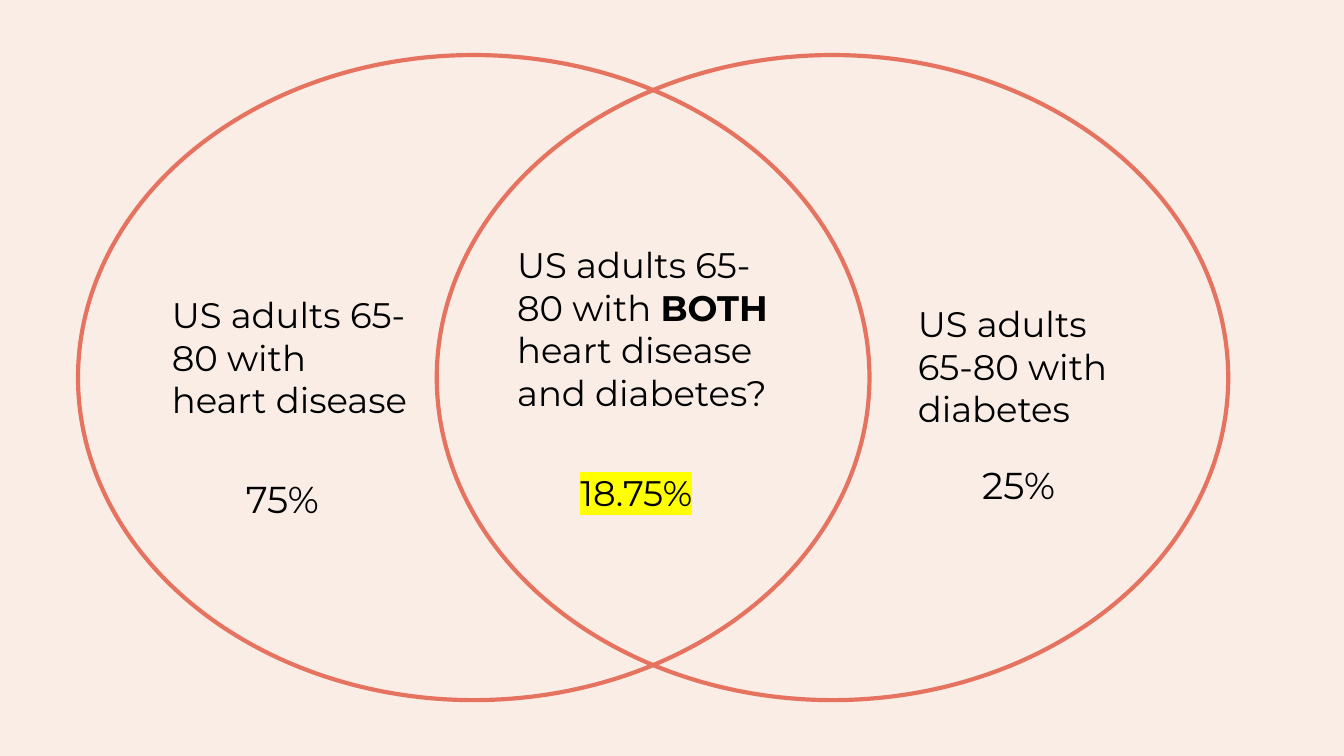
from dataclasses import dataclass

from lxml.etree import Element, SubElement
from pptx import Presentation
from pptx.dml.color import RGBColor
from pptx.enum.shapes import MSO_SHAPE
from pptx.enum.text import MSO_ANCHOR, PP_ALIGN
from pptx.oxml.ns import qn
from pptx.shapes.group import GroupShape
from pptx.slide import Slide
from pptx.util import Pt

CREAM = RGBColor(0xF9, 0xED, 0xE5)
CORAL = RGBColor(0xE5, 0x73, 0x60)
BLACK = RGBColor(0x00, 0x00, 0x00)
YELLOW = RGBColor(0xFF, 0xFF, 0x00)
FONT = "Montserrat"
INSET = Pt(7.2)


@dataclass
class Run:
    text: str
    bold: bool = False
    mark: RGBColor | None = None


@dataclass
class Label:
    left: float
    top: float
    width: float
    height: float
    runs: list[Run]
    size: float = 19


LABELS = [
    Label(85, 149.8, 141.8, 61.2, [Run("US adults 65-80 with heart disease")]),
    Label(270, 123.1, 161.3, 124.6, [
        Run("US adults 65-80 with "),
        Run("BOTH ", bold=True),
        Run("heart disease and diabetes?"),
    ]),
    Label(484.6, 154.8, 133.2, 61.2, [Run("US adults 65-80 with diabetes")]),
    Label(124.6, 247.7, 72, 41.8, [Run("75%")], 20),
    Label(519.1, 240.5, 72, 41.8, [Run("25%")], 20),
    Label(303.84, 245, 91.4, 43.7, [Run("18.75%", mark=YELLOW)]),
]


def draw_ring(group: GroupShape, left: float) -> None:
    ring = group.shapes.add_shape(
        MSO_SHAPE.OVAL, Pt(left), Pt(29.5), Pt(424), Pt(345.6))
    ring.shadow.inherit = False
    ring.fill.background()
    ring.line.color.rgb = CORAL
    ring.line.width = Pt(2.25)


def draw_label(slide: Slide, label: Label) -> None:
    box = slide.shapes.add_textbox(
        Pt(label.left), Pt(label.top), Pt(label.width), Pt(label.height))
    frame = box.text_frame
    frame.word_wrap = True
    frame.vertical_anchor = MSO_ANCHOR.TOP
    frame.margin_left = frame.margin_right = INSET
    frame.margin_top = frame.margin_bottom = INSET
    para = frame.paragraphs[0]
    para.alignment = PP_ALIGN.LEFT
    for part in label.runs:
        run = para.add_run()
        run.text = part.text
        font = run.font
        font.name = FONT
        font.size = Pt(label.size)
        font.bold = part.bold
        font.color.rgb = BLACK
        if part.mark is not None:
            mark = Element(qn("a:highlight"))
            SubElement(mark, qn("a:srgbClr"), val=str(part.mark))
            run._r.get_or_add_rPr().find(qn("a:solidFill")).addnext(mark)


def main() -> None:
    deck = Presentation()
    deck.slide_width, deck.slide_height = Pt(720), Pt(405)
    slide = deck.slides.add_slide(deck.slide_layouts[6])
    slide.background.fill.solid()
    slide.background.fill.fore_color.rgb = CREAM

    venn = slide.shapes.add_group_shape()
    for left in (41.8, 234):
        draw_ring(venn, left)
    for label in LABELS:
        draw_label(slide, label)
    deck.save("out.pptx")


if __name__ == "__main__":
    main()
